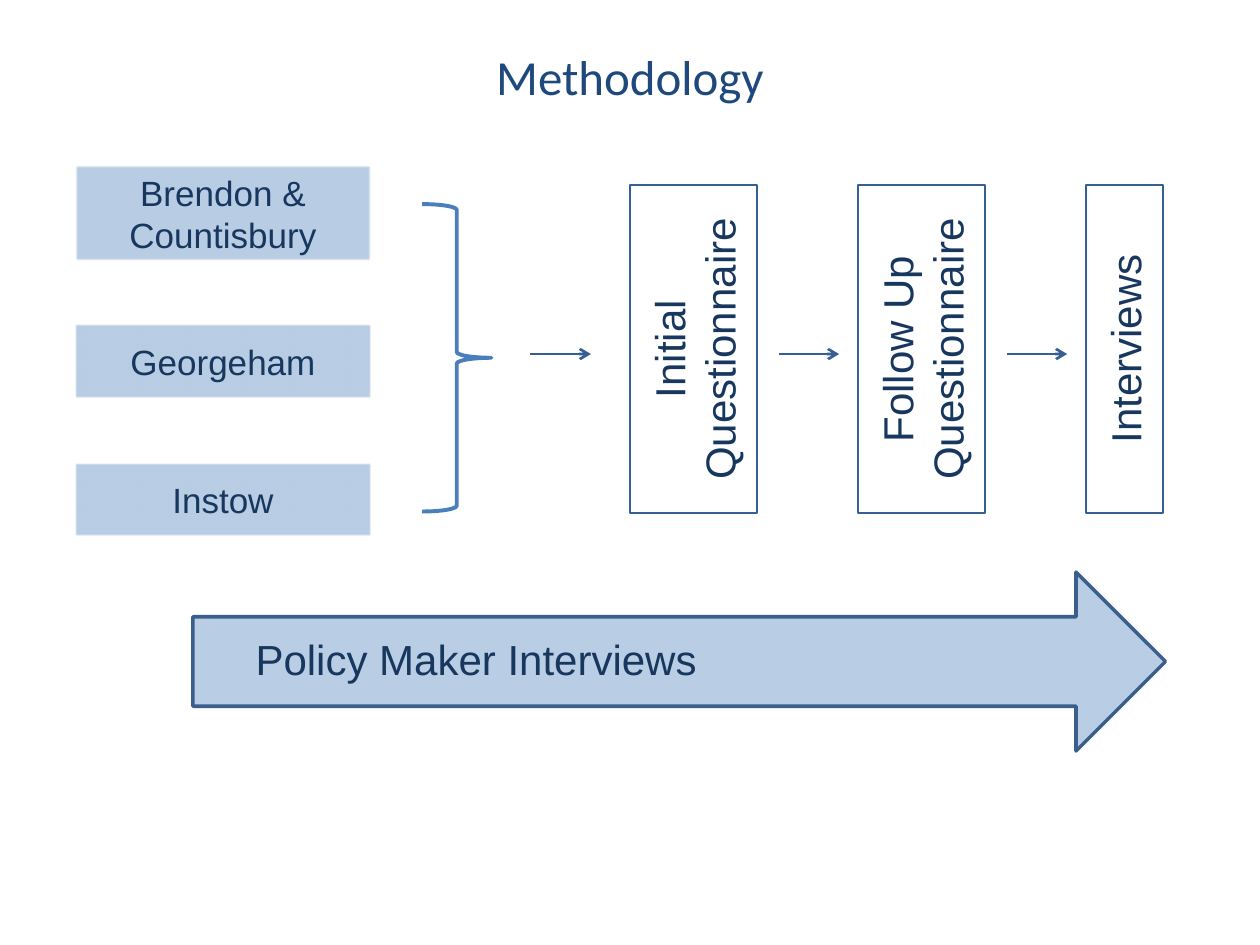
import pptx
import pptx.util
import pptx.dml.color
import pptx.enum.shapes
import pptx.enum.text
import pptx.oxml.ns
from lxml import etree

Inches = pptx.util.Inches
Pt = pptx.util.Pt
Shape = pptx.enum.shapes.MSO_SHAPE
Align = pptx.enum.text.PP_ALIGN
Anchor = pptx.enum.text.MSO_ANCHOR
qn = pptx.oxml.ns.qn

COLORS = {
    "title": "1F497D",
    "text": "17375E",
    "fill": "B9CDE5",
    "line": "376092",
    "brace": "4B7EBC",
    "arrow": "3A5F8C",
}


class Diagram:
    font = "Arial"

    def __init__(self, slide):
        self.slide = slide

    def color(self, name):
        return pptx.dml.color.RGBColor.from_string(COLORS[name])

    def label(self, s, text, size, color="text", font=None,
              align=Align.CENTER, anchor=Anchor.MIDDLE):
        tf = s.text_frame
        tf.word_wrap = True
        tf.vertical_anchor = anchor
        p = tf.paragraphs[0]
        p.text = text
        p.alignment = align
        p.font.size = Pt(size)
        p.font.name = font or self.font
        p.font.color.rgb = self.color(color)

    def text(self, box, text, size, **style):
        s = self.slide.shapes.add_textbox(*map(Inches, box))
        self.label(s, text, size, **style)

    def shape(self, kind, box, fill=None, line=None, width=1):
        s = self.slide.shapes.add_shape(kind, *map(Inches, box))
        s.shadow.inherit = False
        if fill:
            s.fill.solid()
            s.fill.fore_color.rgb = self.color(fill)
        else:
            s.fill.background()
        if line:
            s.line.color.rgb = self.color(line)
            s.line.width = Pt(width)
        else:
            s.line.fill.background()
        return s

    def place(self, top, height, name):
        s = self.shape(Shape.RECTANGLE, (0.59, top, 2.36, height), fill="fill")
        effects = s.element.spPr.find(qn("a:effectLst"))
        etree.SubElement(effects, qn("a:softEdge")).set("rad", str(Pt(1)))
        self.label(s, name, 20)

    def stage(self, left, width, name):
        s = self.shape(Shape.RECTANGLE, (left, 1.47, width, 2.6), line="line")
        s.element.txBody.bodyPr.set("vert", "vert270")
        self.label(s, name, 24)

    def arrow(self, left, y=2.81, length=0.48):
        s = self.slide.shapes.add_connector(
            pptx.enum.shapes.MSO_CONNECTOR.STRAIGHT,
            Inches(left), Inches(y), Inches(left + length), Inches(y))
        s.line.color.rgb = self.color("line")
        s.line.width = Pt(1.5)
        ln = s.element.spPr.find(qn("a:ln"))
        etree.SubElement(ln, qn("a:tailEnd")).set("type", "arrow")
        etree.SubElement(s.element.spPr, qn("a:effectLst"))


def main():
    prs = pptx.Presentation()
    prs.slide_width = Inches(10)
    prs.slide_height = Inches(7.5)
    d = Diagram(prs.slides.add_slide(prs.slide_layouts[6]))

    d.text((0.5, 0.13, 9, 0.95), "Methodology", 28, color="title", font="Calibri")

    for top, height, name in [(1.31, 0.77, "Brendon & Countisbury"),
                              (2.57, 0.59, "Georgeham"),
                              (3.67, 0.59, "Instow")]:
        d.place(top, height, name)

    d.shape(Shape.RIGHT_BRACE, (3.35, 1.62, 0.55, 2.44), line="brace", width=2.25)

    stages = [("Initial Questionnaire", 1.01),
              ("Follow Up Questionnaire", 1.01),
              ("Interviews", 0.61)]
    for i, (name, width) in enumerate(stages):
        d.stage(5 + 1.81 * i, width, name)

    d.shape(Shape.RIGHT_ARROW, (1.53, 4.54, 7.72, 1.42),
            fill="fill", line="arrow", width=2)
    d.text((1.93, 4.98, 6.54, 0.51), "Policy Maker Interviews", 24,
           align=Align.LEFT, anchor=Anchor.TOP)

    for left in (4.21, 6.18, 7.99):
        d.arrow(left)

    prs.save("out.pptx")


if __name__ == "__main__":
    main()
